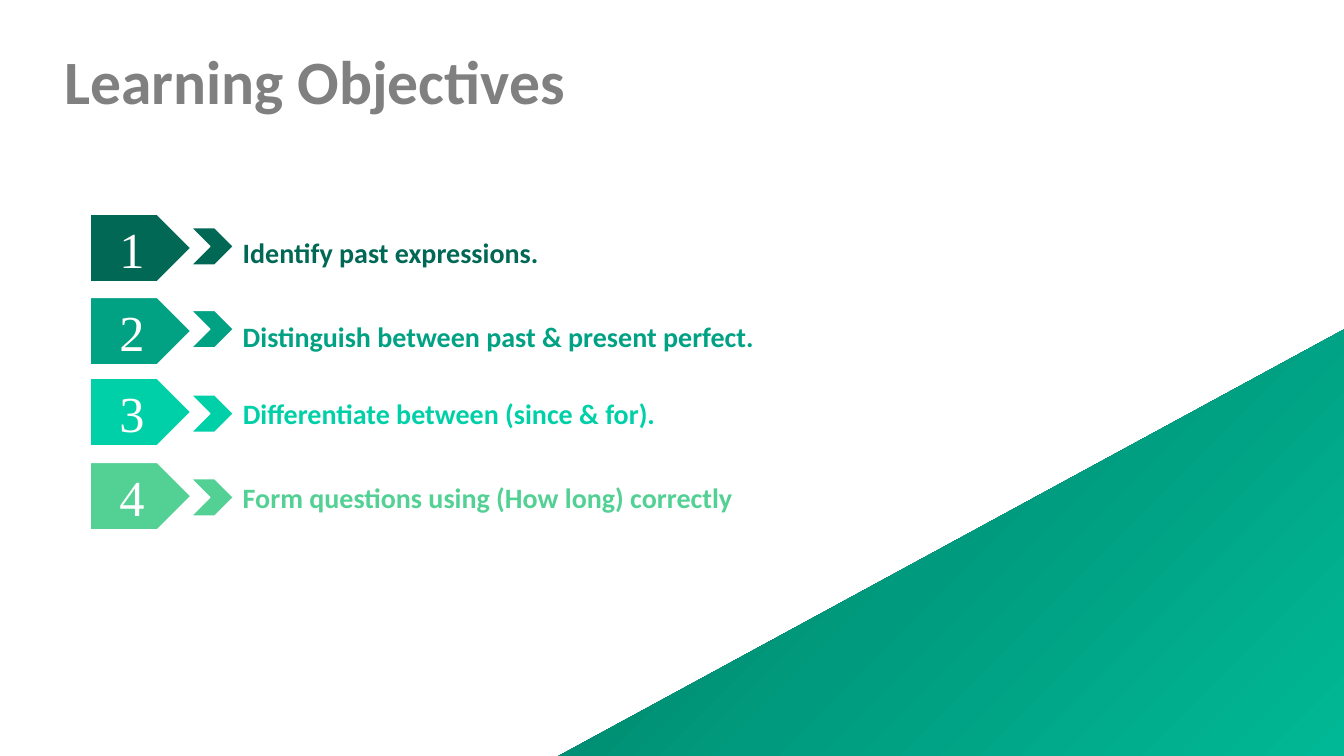
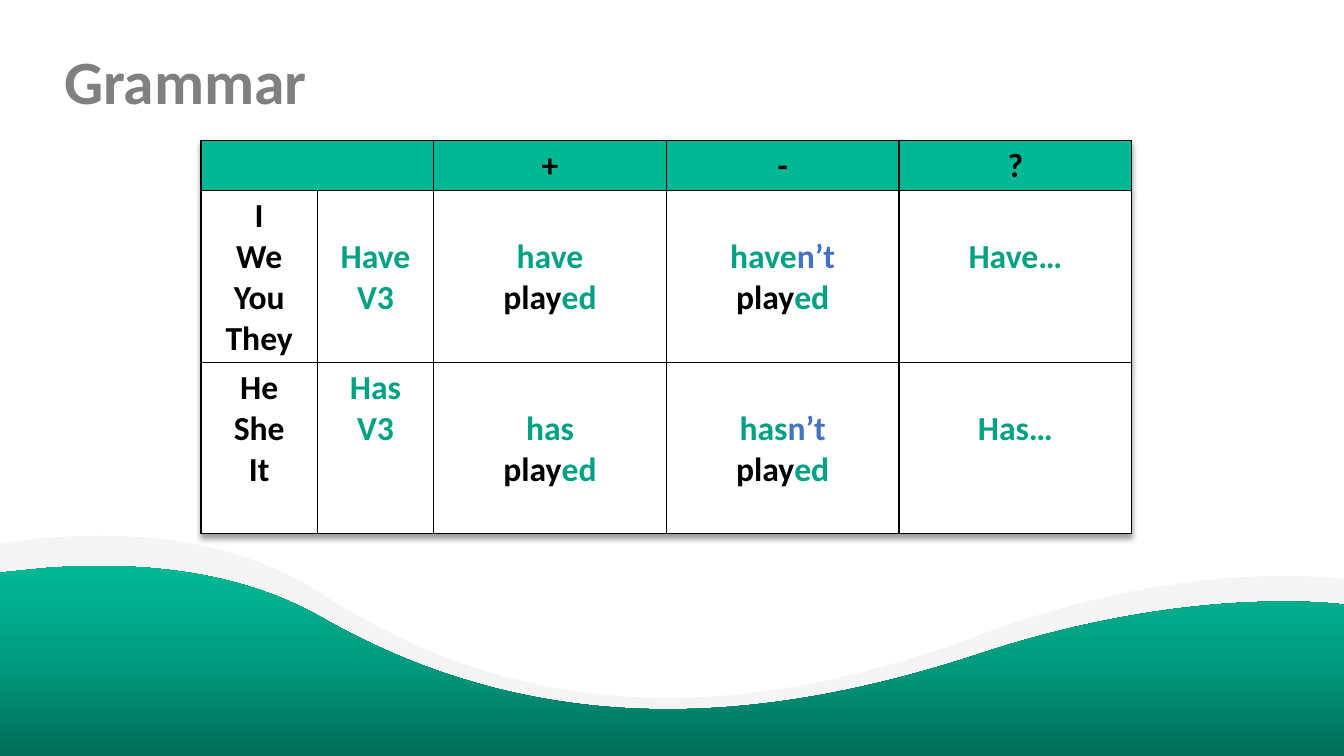
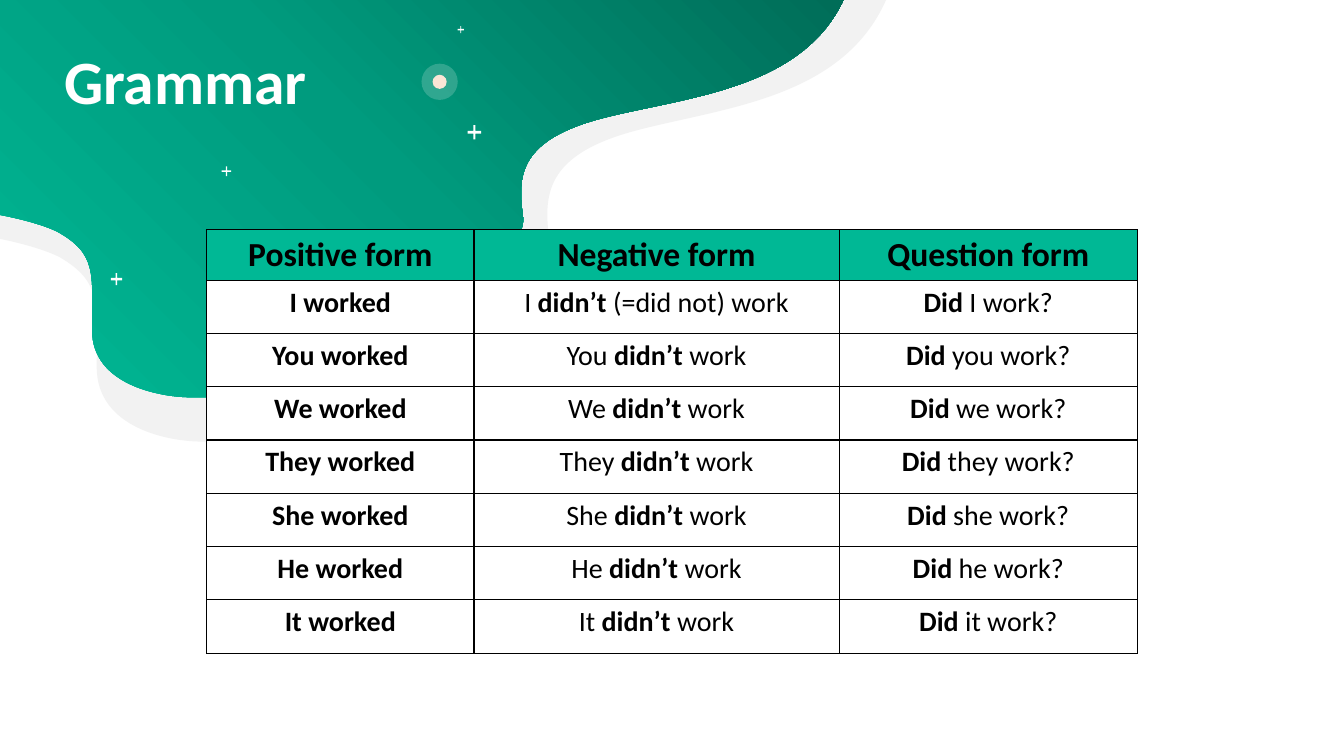
"""Build three grammar lesson slides with shared green styling."""
from dataclasses import dataclass

from pptx import Presentation
from pptx.dml.color import RGBColor
from pptx.enum.shapes import MSO_SHAPE
from pptx.enum.text import MSO_ANCHOR, MSO_AUTO_SIZE, PP_ALIGN
from pptx.oxml import parse_xml
from pptx.oxml.ns import nsdecls, qn
from pptx.util import Pt


@dataclass(frozen=True)
class Theme:
    font: str = "Calibri"
    number_font: str = "Times New Roman"
    black: str = "000000"
    white: str = "FFFFFF"
    grey: str = "808080"
    wave_grey: str = "F5F5F5"
    blob_grey: str = "F2F2F2"
    header: str = "00B895"
    accent: str = "00A283"
    blue: str = "4472C4"
    peach: str = "FBE5D6"
    steps: tuple = ("006854", "00A283", "00D0A8", "53D195")
    gradient: tuple = ((0, "006D58"), (50, "009B7E"), (100, "00B895"))
    title_size: int = 44
    number_size: int = 36
    table_size: int = 24
    body_size: int = 20


T = Theme()
TOP_RIGHT = '<a:path path="circle"><a:fillToRect l="100000" b="100000"/></a:path>'
SHADOW = ('<a:effectLst {ns}><a:outerShdw blurRad="50800" dist="38100" dir="5400000">'
          '<a:srgbClr val="000000"><a:alpha val="40000"/></a:srgbClr>'
          '</a:outerShdw></a:effectLst>')

WAVE = [
    (960, 537.1), (0, 537.1), (0, 388.8), (31.7, 385.2),
    ((98.6, 379.4), (170.6, 386.6), (230.4, 425.5)),
    ((389.5, 527.8), (550.1, 510.5), (702, 453.6)),
    ((853.9, 397.4), (960, 414.7), (960, 414.7)),
]
BLOB = [
    (452.9, 93.6),
    ((389.5, 110.9), (388.1, 139), (392.4, 171.4)),
    ((396.7, 205.2), (329, 206.6), (325.4, 246.2)),
    ((321.1, 283), (288.7, 315.4), (196.6, 315.4)),
    (144, 315.4),
    ((122.4, 315.4), (69.1, 306.7), (69.1, 262.1)),
    ((69.1, 217.4), (73.4, 201.6), (42.5, 183.6)),
    ((32.4, 178.6), (17.3, 174.2), (0, 170.6)),
    (0, 0), (632.9, 0),
    ((601.2, 71.3), (514.8, 77), (452.9, 93.6)),
]


class Deck:
    """Draw styled elements on the current slide."""

    def __init__(self):
        self.prs = Presentation()
        self.prs.slide_width, self.prs.slide_height = Pt(960), Pt(540)
        self.s = None

    def slide(self):
        """Start a blank slide."""
        self.s = self.prs.slides.add_slide(self.prs.slide_layouts[6])

    def run(self, p, text, color=T.black, **fmt):
        """Add one formatted run."""
        r = p.add_run()
        r.text = text
        values = {"name": T.font, "bold": True, **fmt}
        for key, value in values.items():
            setattr(r.font, key, value)
        r.font.color.rgb = RGBColor.from_string(color)

    def paint(self, sp, fill, line=None, weight=1):
        """Set a plain fill and an optional line."""
        sp.shadow.inherit = False
        sp.fill.solid()
        sp.fill.fore_color.rgb = RGBColor.from_string(fill)
        if line:
            sp.line.color.rgb = RGBColor.from_string(line)
            sp.line.width = Pt(weight)
        else:
            sp.line.fill.background()

    def shape(self, kind, x, y, w, h, fill, line=None, alpha=None):
        """Add a preset shape."""
        sp = self.s.shapes.add_shape(kind, Pt(x), Pt(y), Pt(w), Pt(h))
        self.paint(sp, fill, line)
        if alpha:
            color = sp._element.spPr.find(qn("a:solidFill"))[0]
            color.append(parse_xml(f'<a:alpha {nsdecls("a")} val="{alpha * 1000}"/>'))
        return sp

    def outline(self, outline, fill=T.header, shade=None, sx=1, sy=1, dy=0,
                line=None, weight=1):
        """Add a freeform of corners and curves with a plain or gradient fill."""
        parts = [part if len(part) == 3 else (part,) for part in outline]
        parts = [[(Pt(x * sx), Pt(y * sy + dy)) for x, y in part] for part in parts]
        ends = [part[-1] for part in parts]
        builder = self.s.shapes.build_freeform(*ends[0])
        builder.add_line_segments(ends[1:], close=True)
        sp = builder.convert_to_shape()
        spPr = sp._element.spPr
        segments = list(next(spPr.iter(qn("a:path"))))
        for segment, part in zip(segments, parts):
            if len(part) == 3:
                pts = "".join(f'<a:pt x="{x - sp.left}" y="{y - sp.top}"/>' for x, y in part)
                segment.getparent().replace(segment, parse_xml(
                    f'<a:cubicBezTo {nsdecls("a")}>{pts}</a:cubicBezTo>'))
        self.paint(sp, fill, line, weight)
        if shade:
            stops = "".join(f'<a:gs pos="{pos * 1000}"><a:srgbClr val="{c}"/></a:gs>'
                            for pos, c in T.gradient)
            xml = f'<a:gradFill {nsdecls("a")}><a:gsLst>{stops}</a:gsLst>{shade}</a:gradFill>'
            spPr.replace(spPr.find(qn("a:solidFill")), parse_xml(xml))

    def text(self, text, x, y, w, h, size, color, spacing=1.0, grow=False):
        """Add a one-paragraph text box."""
        tf = self.s.shapes.add_textbox(Pt(x), Pt(y), Pt(w), Pt(h)).text_frame
        tf.word_wrap = True
        tf.auto_size = MSO_AUTO_SIZE.SHAPE_TO_FIT_TEXT if grow else MSO_AUTO_SIZE.NONE
        p = tf.paragraphs[0]
        p.line_spacing = spacing
        self.run(p, text, color, size=Pt(size))

    def title(self, text, color=T.grey):
        """Add the slide title."""
        self.text(text, 38.7, 33.1, 396.7, 50.4, T.title_size, color, 0.9)

    def step(self, number, text, color, y, chevron_y, text_y, text_w, text_h, spacing):
        """Add a numbered objective."""
        sp = self.shape(MSO_SHAPE.PENTAGON, 64.4, y, 72, 48.2, color, T.white)
        tf = sp.text_frame
        tf.vertical_anchor = MSO_ANCHOR.MIDDLE
        p = tf.paragraphs[0]
        p.alignment = PP_ALIGN.CENTER
        self.run(p, str(number), T.white, name=T.number_font,
                 size=Pt(T.number_size), bold=False)
        self.shape(MSO_SHAPE.CHEVRON, 136.6, chevron_y, 30.2, 26.6, color, T.white)
        self.text(text, 166.3, text_y, text_w, text_h, T.body_size, color, spacing, True)

    def cell(self, cell, paragraphs, fill, size, drop=0):
        """Fill, border and write one table cell."""
        tcPr = cell._tc.get_or_add_tcPr()
        for side in "LRTB":
            tcPr.append(parse_xml(
                f'<a:ln{side} {nsdecls("a")} w="12700"><a:solidFill>'
                f'<a:srgbClr val="{T.black}"/></a:solidFill></a:ln{side}>'))
        cell.fill.solid()
        cell.fill.fore_color.rgb = RGBColor.from_string(fill)
        cell.margin_top, cell.margin_bottom = Pt(3.6 + drop), Pt(2)
        tf = cell.text_frame
        for i, runs in enumerate(paragraphs):
            p = tf.add_paragraph() if i else tf.paragraphs[0]
            p.alignment = PP_ALIGN.CENTER
            for text, fmt in runs:
                self.run(p, text, **{"size": Pt(size), **fmt})

    def table(self, x, y, cols, heights, cells, body_size, drops=(), shadow=False):
        """Add a bordered table with a green header row."""
        frame = self.s.shapes.add_table(len(heights), len(cols), Pt(x), Pt(y),
                                        Pt(sum(cols)), Pt(sum(heights)))
        table = frame.table
        table.first_row = table.horz_banding = False
        for col, w in zip(table.columns, cols):
            col.width = Pt(w)
        for row, h in zip(table.rows, heights):
            row.height = Pt(h)
        for i, row in enumerate(cells):
            for j, paragraphs in enumerate(row):
                self.cell(table.cell(i, j), paragraphs, T.white if i else T.header,
                          body_size if i else T.table_size,
                          29.3 if (i, j) in drops else 0)
        if shadow:
            table._tbl.tblPr.insert(0, parse_xml(SHADOW.format(ns=nsdecls("a"))))
        return table


def words(*lines, **fmt):
    """Give one single-run paragraph for each line."""
    return [[(line, fmt)] for line in lines]


def objectives(d):
    """Draw the learning objectives."""
    d.slide()
    d.outline([(960, 235.4), (960, 540), (399, 540)],
              shade='<a:lin ang="2700000" scaled="0"/>')
    d.title("Learning Objectives")
    steps = [
        ("Identify past expressions.", 153.1, 162.7, 152.6, 262.1, 39.6, 1.5),
        ("Distinguish between past & present perfect.", 212.4, 221.8, 212.4, 480.2, 39.6, 1.5),
        ("Differentiate between (since & for).", 270.2, 282.2, 279.8, 606.2, 31.7, 1.0),
        ("Form questions using (How long) correctly", 330.3, 342, 339.8, 599.8, 31.7, 1.0),
    ]
    for i, ((text, *place), color) in enumerate(zip(steps, T.steps), 1):
        d.step(i, text, color, *place)


def present_perfect(d):
    """Draw the present perfect table."""
    d.slide()
    d.outline(WAVE, T.wave_grey, line=T.wave_grey, weight=1.62)
    d.outline(WAVE, shade='<a:lin ang="16200000" scaled="0"/>', sy=0.883, dy=65.74)
    green, blue = {"color": T.accent}, {"color": T.blue}
    played = [("play", {}), ("ed", green)]
    cells = [[[], [], *(words(sign) for sign in "+-?")]]
    for verb, people in (("have", ("I", "We", "You", "They")), ("has", ("He", "She", "It"))):
        cells.append([
            words(*people),
            words(verb.title(), "V3", **green),
            [[(verb, green)], played],
            [[(verb, green), ("n’t", blue)], played],
            words(verb.title() + "…", **green),
        ])
    drops = {(1, 1), *((i, j) for i in (1, 2) for j in (2, 3, 4))}
    table = d.table(143.6, 100.1, [83.1, 83.1] + [166.2] * 3, [36, 122.9, 121.9], cells,
                    T.table_size, drops, shadow=True)
    table.cell(0, 0).merge(table.cell(0, 1))
    d.title("Grammar")


def past_simple(d):
    """Draw the past simple table."""
    d.slide()
    d.outline(BLOB, T.blob_grey)
    d.outline(BLOB, shade=TOP_RIGHT, sx=0.952, sy=0.9)
    pluses = [(79.2, 195.1, 8, 8.6), (326.9, 18.7, 4.5, 5),
              (334.1, 89.3, 9.6, 10.3), (158.4, 118.8, 6.8, 7)]
    for place in pluses:
        d.shape(MSO_SHAPE.CROSS, *place, T.white).adjustments[0] = 0.43
    d.shape(MSO_SHAPE.OVAL, 301.1, 45.5, 25.9, 25.9, T.white, alpha=19)
    d.shape(MSO_SHAPE.OVAL, 309, 53.4, 10.1, 10.1, T.peach)
    plain = {"bold": False}
    cells = [[words(f"{form} form") for form in ("Positive", "Negative", "Question")]]
    for who in ("I", "You", "We", "They", "She", "He", "It"):
        first = who == "I"
        cells.append([
            words(f"{who} worked"),
            [[(f"{who} ", plain), ("didn’t", {}),
              (" (=did not) work" if first else " work", plain)]],
            [[("Did ", {}), (f"{who if first else who.lower()} work?", plain)]],
        ])
    d.table(147.7, 164.2, [190.8, 260.9, 213.1], [36] + [38.05] * 7, cells, T.body_size)
    d.title("Grammar", T.white)


def main():
    """Build and save the slides."""
    d = Deck()
    for build in (objectives, present_perfect, past_simple):
        build(d)
    d.prs.save("out.pptx")


if __name__ == "__main__":
    main()
